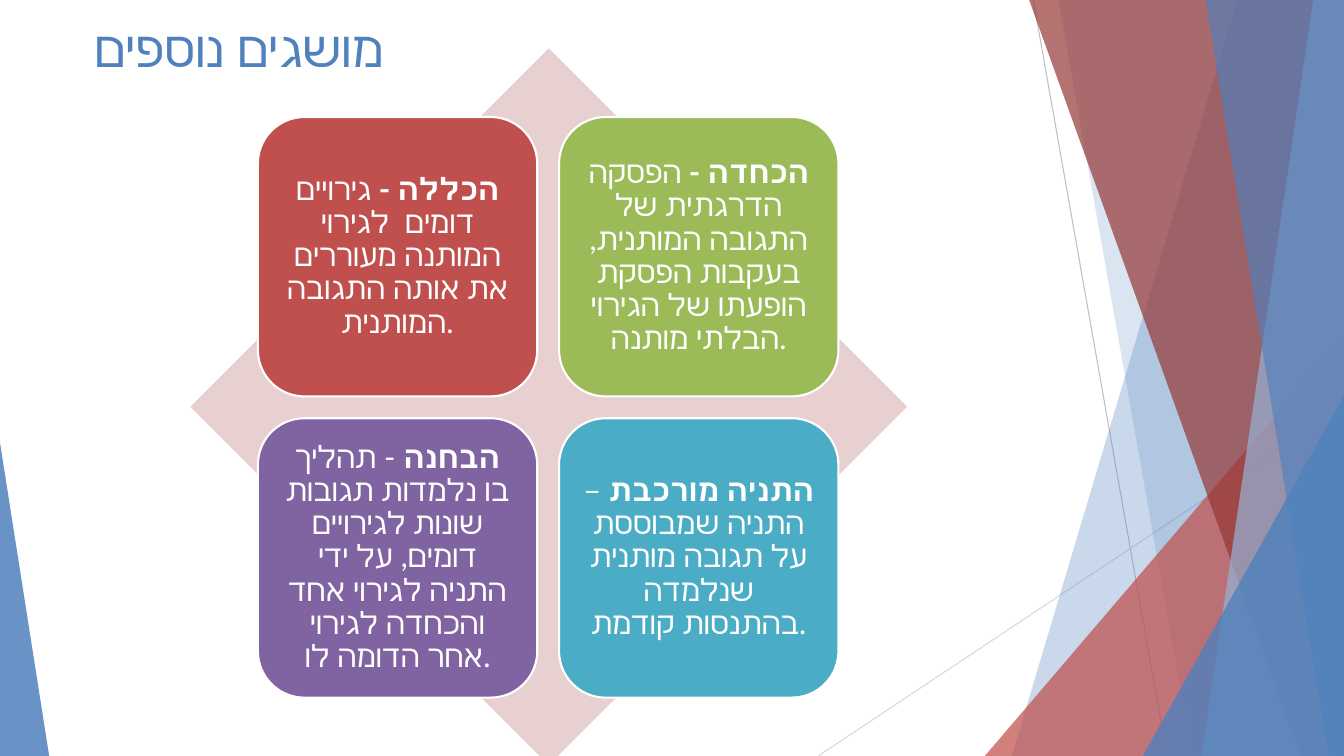
from dataclasses import dataclass

from lxml import etree
from pptx import Presentation
from pptx.dml.color import RGBColor
from pptx.enum.shapes import MSO_CONNECTOR, MSO_SHAPE
from pptx.enum.text import MSO_ANCHOR, PP_ALIGN
from pptx.oxml.ns import qn
from pptx.util import Cm, Pt

STRAIGHT = MSO_CONNECTOR.STRAIGHT
TRIANGLE, DIAMOND = MSO_SHAPE.ISOSCELES_TRIANGLE, MSO_SHAPE.DIAMOND
ROUNDED = MSO_SHAPE.ROUNDED_RECTANGLE
TOP, MIDDLE = MSO_ANCHOR.TOP, MSO_ANCHOR.MIDDLE
LEFT, CENTER = PP_ALIGN.LEFT, PP_ALIGN.CENTER

FONT = "Lato"
COLORS = {
    "white": "FFFFFF", "blue": "4F81BD", "light_blue": "95B3D7",
    "red": "C0504D", "dark_red": "953735", "pink": "E8D0D0",
    "green": "9BBB59", "purple": "8064A2", "teal": "4BACC6",
    "gray": "BFBFBF", "light_gray": "D9D9D9",
}
SLIDE_WIDTH, SLIDE_HEIGHT = 33.87, 19.05
RIBBON_TOP = -0.02
CARD_LEFT, CARD_TOP, CARD_SIZE, CARD_PITCH = 6.5, 2.95, 7.04, 7.59


@dataclass
class Ray:
    start: tuple[float, float]
    end: tuple[float, float]
    color: str


@dataclass
class Ribbon:
    """Band from a slanted left edge to the right side of the slide."""
    top_x: float
    bottom_x: float
    color: str
    opacity: int


@dataclass
class Wedge:
    """Right triangle standing on the bottom of the slide."""
    left: float
    top: float
    width: float
    apex: int
    color: str
    opacity: int


@dataclass
class Card:
    term: str
    meaning: str
    color: str


RAYS = [
    Ray((26.04, 0), (29.41, SLIDE_HEIGHT), "gray"),
    Ray((SLIDE_WIDTH, 10.24), (20.62, SLIDE_HEIGHT), "light_gray"),
]
FACETS = [
    Ribbon(31.19, 25.5, "blue", 30),
    Ribbon(26.67, 30.05, "blue", 20),
    Wedge(24.82, 8.46, 9.05, 1, "red", 72),
    Ribbon(25.93, 32.79, "dark_red", 70),
    Ribbon(33.1, 30.28, "light_blue", 70),
    Ribbon(30.38, 33.48, "blue", 65),
    Wedge(28.8, 9.98, 5.07, 1, "blue", 80),
    Wedge(0, 11.15, 1.24, 0, "blue", 85),
]
CARDS = [
    Card("הכללה - ", "גירויים דומים  לגירוי המותנה מעוררים את אותה התגובה המותנית.", "red"),
    Card("הכחדה - ", "הפסקה הדרגתית של התגובה המותנית, בעקבות הפסקת הופעתו של "
         "הגירוי הבלתי מותנה.", "green"),
    Card("הבחנה", " - תהליך בו נלמדות תגובות שונות לגירויים דומים, על ידי התניה "
         "לגירוי אחד והכחדה לגירוי אחר הדומה לו.", "purple"),
    Card("התניה מורכבת ", "– התניה שמבוססת על תגובה מותנית שנלמדה בהתנסות קודמת.", "teal"),
]


def rgb(color: str) -> RGBColor:
    return RGBColor.from_string(COLORS[color])


def paint(shape, color: str, opacity: int = 100) -> None:
    shape.shadow.inherit = False
    shape.line.fill.background()
    shape.fill.solid()
    shape.fill.fore_color.rgb = rgb(color)
    if opacity < 100:
        fill_color = shape.fill._xPr.find(qn("a:solidFill"))[0]
        etree.SubElement(fill_color, qn("a:alpha"), val=str(opacity * 1000))


def write(frame, *texts: str, size: float, color: str, align, anchor,
          bold_first: bool = False, spacing: float = 1.0, rtl: bool = False,
          insets: tuple[float, float] = (0.23, 0.23)) -> None:
    frame.word_wrap = True
    frame.vertical_anchor = anchor
    frame.margin_left = frame.margin_right = Cm(insets[0])
    frame.margin_top = frame.margin_bottom = Cm(insets[1])
    para = frame.paragraphs[0]
    para.alignment = align
    para.line_spacing = spacing
    if rtl:
        para._p.get_or_add_pPr().set("rtl", "1")
    for index, text in enumerate(texts):
        span = para.add_run()
        span.text = text
        span.font.size = Pt(size)
        span.font.bold = bold_first and index == 0
        span.font.color.rgb = rgb(color)
        span.font.name = FONT
        # Hebrew takes the complex-script typeface
        etree.SubElement(span._r.get_or_add_rPr(), qn("a:cs"), typeface=FONT)


def draw_ray(page, ray: Ray) -> None:
    line = page.shapes.add_connector(
        STRAIGHT, *(Cm(value) for value in ray.start + ray.end))
    line.line.color.rgb = rgb(ray.color)
    line.line.width = Pt(0.75)
    etree.SubElement(line._element.spPr, qn("a:effectLst"))


def draw_ribbon(page, ribbon: Ribbon) -> None:
    corners = [(SLIDE_WIDTH, RIBBON_TOP), (SLIDE_WIDTH, SLIDE_HEIGHT),
               (ribbon.bottom_x, SLIDE_HEIGHT)]
    outline = page.shapes.build_freeform(Cm(ribbon.top_x), Cm(RIBBON_TOP))
    outline.add_line_segments([(Cm(x), Cm(y)) for x, y in corners], close=True)
    paint(outline.convert_to_shape(), ribbon.color, ribbon.opacity)


def draw_wedge(page, wedge: Wedge) -> None:
    shape = page.shapes.add_shape(
        TRIANGLE, Cm(wedge.left), Cm(wedge.top),
        Cm(wedge.width), Cm(SLIDE_HEIGHT - wedge.top))
    shape.adjustments[0] = wedge.apex
    paint(shape, wedge.color, wedge.opacity)


def draw_card(page, card: Card, row: int, column: int) -> None:
    box = page.shapes.add_shape(
        ROUNDED, Cm(CARD_LEFT + column * CARD_PITCH),
        Cm(CARD_TOP + row * CARD_PITCH), Cm(CARD_SIZE), Cm(CARD_SIZE))
    paint(box, card.color)
    box.line.color.rgb = rgb("white")
    box.line.width = Pt(1.5)
    write(box.text_frame, card.term, card.meaning, size=22, color="white",
          align=CENTER, anchor=MIDDLE, bold_first=True, spacing=0.9)


def main() -> None:
    deck = Presentation()
    deck.slide_width, deck.slide_height = Cm(SLIDE_WIDTH), Cm(SLIDE_HEIGHT)
    page = deck.slides.add_slide(deck.slide_layouts[6])

    # Faceted backdrop
    for ray in RAYS:
        draw_ray(page, ray)
    for facet in FACETS:
        if isinstance(facet, Ribbon):
            draw_ribbon(page, facet)
        else:
            draw_wedge(page, facet)

    # Title
    title = page.shapes.add_textbox(Cm(1.88), Cm(0.3), Cm(23.88), Cm(3.66))
    write(title.text_frame, "מושגים נוספים", size=36, color="blue",
          align=LEFT, anchor=TOP, rtl=True, insets=(0.5, 0.13))

    # Diamond with four concept cards
    diamond = page.shapes.add_shape(DIAMOND, Cm(4.8), Cm(1.22), Cm(18.06), Cm(18.06))
    paint(diamond, "pink")
    for index, card in enumerate(CARDS):
        draw_card(page, card, *divmod(index, 2))

    deck.save("out.pptx")


if __name__ == "__main__":
    main()
